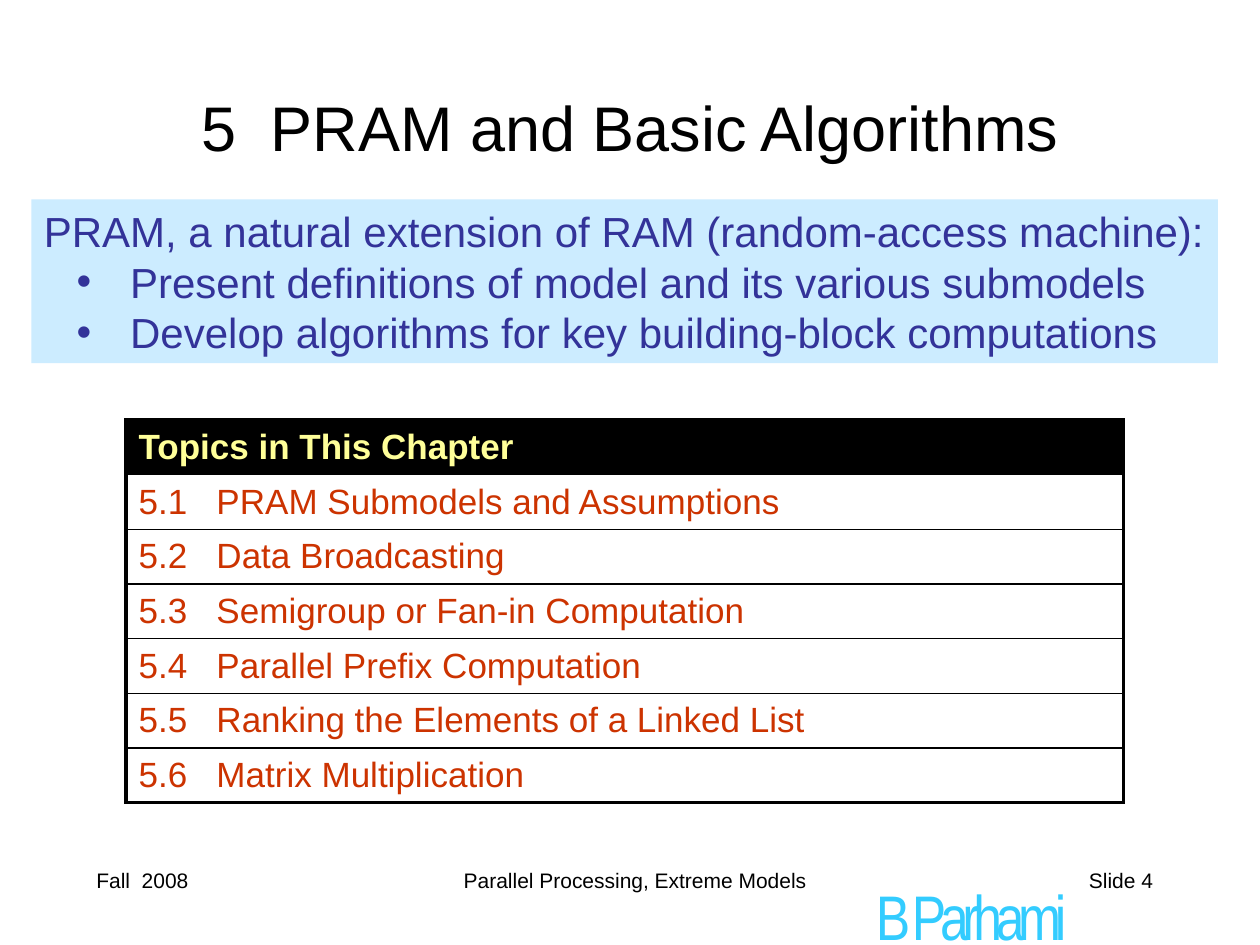
from lxml import etree
from pptx import Presentation
from pptx import util as u
from pptx.dml.color import RGBColor
from pptx.enum import shapes, text
from pptx.oxml.ns import qn

Pt = u.Pt
ALIGN = text.PP_ALIGN
ANCHOR = text.MSO_ANCHOR

BLACK = "000000"
TOPICS = [
    "PRAM Submodels and Assumptions",
    "Data Broadcasting",
    "Semigroup or Fan-in Computation",
    "Parallel Prefix Computation",
    "Ranking the Elements of a Linked List",
    "Matrix Multiplication",
]


def color(value):
    return RGBColor.from_string(value)


def add_bullet(para, margin, hanging):
    props = para._p.get_or_add_pPr()
    props.set("marL", str(Pt(margin)))
    props.set("indent", str(-Pt(hanging)))
    etree.SubElement(props, qn("a:buFont"), typeface="Arial")
    etree.SubElement(props, qn("a:buChar"), char="•")


def add_tab(para, position):
    stops = etree.SubElement(para._p.get_or_add_pPr(), qn("a:tabLst"))
    etree.SubElement(stops, qn("a:tab"), pos=str(Pt(position)), algn="l")


def write(para, words, size=12, fill=BLACK, font="Arial", bold=False,
          align=ALIGN.LEFT, tracking=None):
    """Put one formatted span of text in a paragraph."""
    para.alignment = align
    span = para.add_run()
    span.text = words
    span.font.size = Pt(size)
    span.font.name = font
    span.font.bold = bold
    span.font.color.rgb = color(fill)
    if tracking is not None:
        span.font._element.set("spc", str(round(tracking * 100)))


def add_text(page, words, left, top, width, height, anchor=ANCHOR.TOP,
             **style):
    box = page.shapes.add_textbox(Pt(left), Pt(top), Pt(width), Pt(height))
    box.text_frame.word_wrap = True
    box.text_frame.vertical_anchor = anchor
    write(box.text_frame.paragraphs[0], words, **style)


def add_summary(page, heading, points):
    """Tinted panel with a lead sentence and bulleted points."""
    panel = page.shapes.add_shape(shapes.MSO_SHAPE.RECTANGLE,
                                  Pt(18), Pt(114), Pt(678), Pt(93.6))
    panel.shadow.inherit = False
    panel.fill.solid()
    panel.fill.fore_color.rgb = color("CCECFF")
    panel.line.fill.background()
    frame = panel.text_frame
    frame.word_wrap = True
    frame.vertical_anchor = ANCHOR.TOP
    for index, words in enumerate([heading, *points]):
        para = frame.add_paragraph() if index else frame.paragraphs[0]
        para.line_spacing = Pt(28.8)
        if index:
            add_bullet(para, margin=49.3, hanging=30.5)
        write(para, words, size=24, fill="333399")


def set_borders(cell, **widths):
    props = cell._tc.get_or_add_tcPr()
    for side in "LRTB":
        line = etree.SubElement(props, qn(f"a:ln{side}"),
                                w=str(Pt(widths[side])))
        paint = etree.SubElement(line, qn("a:solidFill"))
        etree.SubElement(paint, qn("a:srgbClr"), val=BLACK)


def add_topics(page, heading, topics):
    """One-column table: dark heading row, then numbered topics."""
    rows, row_height = len(topics) + 1, 31.2
    table = page.shapes.add_table(rows, 1, Pt(72), Pt(240), Pt(570),
                                  Pt(rows * row_height)).table
    table.first_row = table.horz_banding = False
    thick, thin = 2.25, 1
    for index in range(rows):
        table.rows[index].height = Pt(row_height)
        cell = table.cell(index, 0)
        cell.vertical_anchor = ANCHOR.MIDDLE
        set_borders(cell, L=thick, R=thick,
                    T=thick if index == 0 else thin,
                    B=thick if index == rows - 1 else thin)
        para = cell.text_frame.paragraphs[0]
        if index == 0:
            cell.fill.solid()
            cell.fill.fore_color.rgb = color(BLACK)
            write(para, heading, size=20, fill="FFFF99", bold=True,
                  align=ALIGN.JUSTIFY)
        else:
            cell.fill.background()
            add_tab(para, 44.5)
            write(para, f"5.{index}\t{topics[index - 1]}", size=20,
                  fill="CC3300", align=ALIGN.JUSTIFY)


def main():
    deck = Presentation()
    deck.slide_width, deck.slide_height = Pt(720), Pt(540)
    page = deck.slides.add_slide(deck.slide_layouts[6])

    # Author signature, wide enough for one line
    add_text(page, "B Parhami", 465, 498, 180, 30, size=36, fill="33CCFF",
             font="Arial Narrow", align=ALIGN.CENTER, tracking=-3.6)

    # Footer
    for words, left, width, align in [
        ("Fall  2008", 48, 150, ALIGN.LEFT),
        ("Parallel Processing, Extreme Models", 174, 378, ALIGN.CENTER),
        ("Slide 4", 516, 150, ALIGN.RIGHT),
    ]:
        add_text(page, words, left, 492, width, 36, align=align)

    # Title
    add_text(page, "5  PRAM and Basic Algorithms", 54, 36, 612, 72,
             anchor=ANCHOR.MIDDLE, size=36, align=ALIGN.CENTER)

    # Summary and chapter contents
    add_summary(page,
                "PRAM, a natural extension of RAM (random-access machine):",
                ["Present definitions of model and its various submodels",
                 "Develop algorithms for key building-block computations"])
    add_topics(page, "Topics in This Chapter", TOPICS)

    deck.save("out.pptx")


if __name__ == "__main__":
    main()
